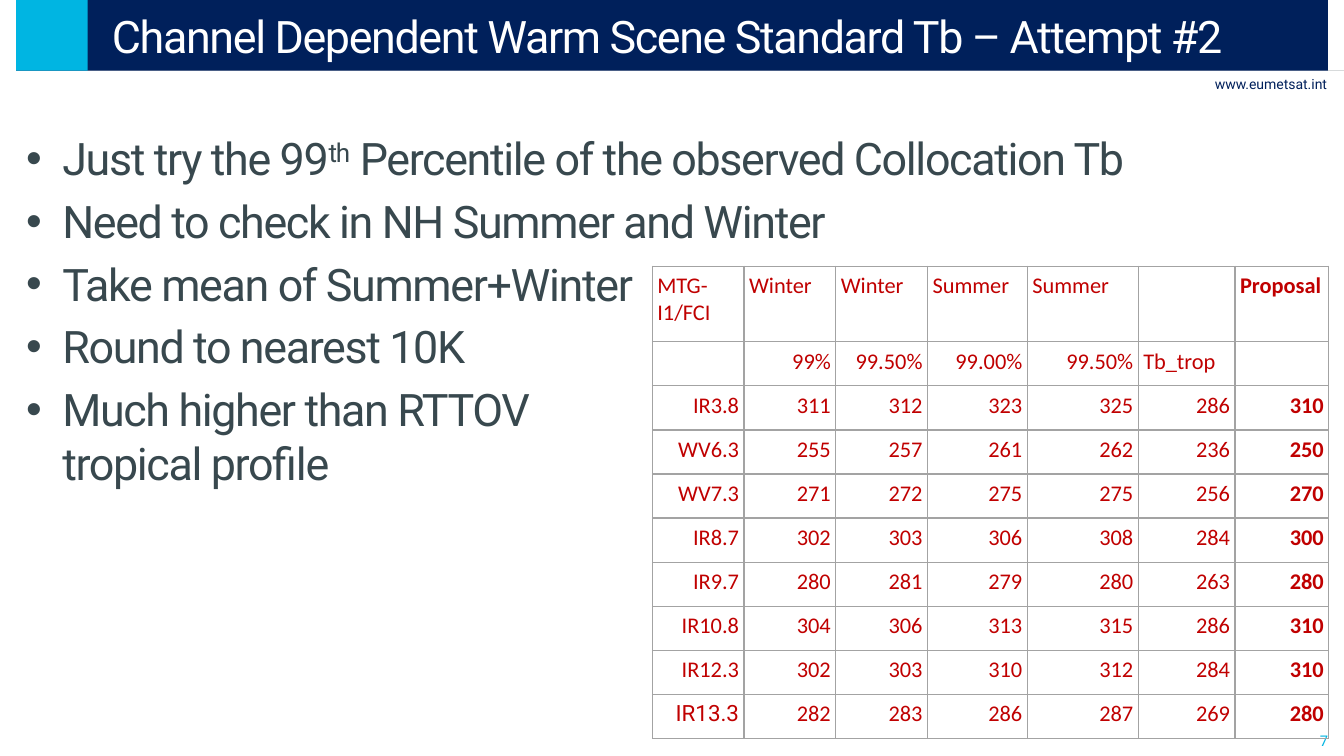
from lxml import etree
from pptx import Presentation, util as u
from pptx.dml.color import RGBColor
from pptx.enum import shapes, text
from pptx.oxml import ns

NAVY, CYAN, SLATE, RED, GREY = "00205B", "00B5E2", "38484E", "C00000", "A3A3A3"
RIGHT = text.PP_ALIGN.RIGHT

deck = Presentation()
deck.slide_width, deck.slide_height = u.Inches(13.33), u.Inches(7.5)
W = 13.33
EDGE, BAR = 0.16, 0.71
slide = deck.slides.add_slide(deck.slide_layouts[6])


def add_run(para, words, size, hue, face="Roboto", bold=False, **attrs):
    run = para.add_run()
    run.text = words
    font = run.font
    font.size, font.name, font.bold = u.Pt(size), face, bold
    font.color.rgb = RGBColor.from_string(hue)
    for key, val in attrs.items():
        run._r.get_or_add_rPr().set(key, str(val))


def add_box(left, top, width, height, wrap=True):
    box = slide.shapes.add_textbox(*map(u.Inches, (left, top, width, height)))
    box.text_frame.word_wrap = wrap
    return box.text_frame


# Header rule
rule = slide.shapes.add_connector(
    shapes.MSO_CONNECTOR.STRAIGHT,
    u.Inches(EDGE), u.Inches(0.7), u.Inches(W), u.Inches(0.7))
rule.line.width = u.Pt(0.5)
rule.line.color.rgb = RGBColor.from_string(SLATE)
tint = rule._element.spPr.find(".//" + ns.qn("a:srgbClr"))
etree.SubElement(tint, ns.qn("a:alpha"), val="20000")
etree.SubElement(rule._element.spPr, ns.qn("a:effectLst"))

# Web address and page number
for words, size, hue, spot, wrap in [
    ("www.eumetsat.int", 10, NAVY, (11.92, 0.7, 1.34, 0.27), False),
    ("7", 10.5, CYAN, (12.6, 7.21, 0.67, 0.29), True),
]:
    para = add_box(*spot, wrap).paragraphs[0]
    para.alignment = RIGHT
    add_run(para, words, size, hue)

# Title bar with its square
for width, hue in [(W - 2 * EDGE, NAVY), (BAR, CYAN)]:
    bar = slide.shapes.add_shape(
        shapes.MSO_SHAPE.RECTANGLE,
        *map(u.Inches, (EDGE, -0.01, width, BAR)))
    bar.shadow.inherit = False
    bar.fill.solid()
    bar.fill.fore_color.rgb = RGBColor.from_string(hue)
    bar.line.fill.background()

# Title
frame = add_box(EDGE + BAR, 0, W - EDGE - BAR, 0.7)
frame.vertical_anchor = text.MSO_ANCHOR.MIDDLE
frame.margin_left = u.Inches(0.24)
frame.margin_right = frame.margin_top = frame.margin_bottom = u.Inches(0.04)
add_run(frame.paragraphs[0],
        "Channel Dependent Warm Scene Standard Tb – Attempt #2",
        32, "FFFFFF", spc=-100)

# Bullets: each item is a list of (words, baseline) runs
items = [
    [("Just try the 99", 0), ("th", 30000),
     (" Percentile of the observed Collocation Tb", 0)],
    [("Need to check in NH Summer and Winter", 0)],
    [("Take mean of Summer+Winter", 0)],
    [("Round to nearest 10K", 0)],
    [("Much higher than RTTOV ", 0), ("tropical profile", 0)],
]
frame = add_box(EDGE, 1.25, W - 2 * EDGE, 6.08)
for num, item in enumerate(items):
    para = frame.add_paragraph() if num else frame.paragraphs[0]
    props = para._p.get_or_add_pPr()
    props.set("marL", str(u.Inches(0.36)))
    props.set("indent", str(-u.Inches(0.36)))
    etree.SubElement(props, ns.qn("a:buFont"), typeface="Arial")
    etree.SubElement(props, ns.qn("a:buChar"), char="•")
    if num:
        para.space_before = u.Pt(6.4)
    for words, base in item:
        if words == "tropical profile":
            para.add_line_break()
        add_run(para, words, 32, SLATE, spc=-100, baseline=base)

# Table of brightness temperatures
rows = [
    ["MTG-I1/FCI", "Winter", "Winter", "Summer", "Summer", "", "Proposal"],
    ["", "99%", "99.50%", "99.00%", "99.50%", "Tb_trop", ""],
    ["IR3.8", 311, 312, 323, 325, 286, 310],
    ["WV6.3", 255, 257, 261, 262, 236, 250],
    ["WV7.3", 271, 272, 275, 275, 256, 270],
    ["IR8.7", 302, 303, 306, 308, 284, 300],
    ["IR9.7", 280, 281, 279, 280, 263, 280],
    ["IR10.8", 304, 306, 313, 315, 286, 310],
    ["IR12.3", 302, 303, 310, 312, 284, 310],
    ["IR13.3", 282, 283, 286, 287, 269, 280],
]
cols = [0.91, 0.91, 0.91, 0.99, 1.1, 0.96, 0.93]
tall, head = 4.69, 0.75
table = slide.shapes.add_table(
    len(rows), len(cols),
    *map(u.Inches, (6.47, 2.64, sum(cols), tall))).table
table.first_row = table.horz_banding = False
for col, width in zip(table.columns, cols):
    col.width = u.Inches(width)
for r, row in enumerate(rows):
    table.rows[r].height = u.Inches(
        (tall - head) / (len(rows) - 1) if r else head)
    for c, value in enumerate(row):
        cell = table.cell(r, c)
        cell.margin_left = cell.margin_right = u.Inches(0.05)
        cell.margin_top = cell.margin_bottom = u.Inches(0.06)
        para = cell.text_frame.paragraphs[0]
        if r and value != "Tb_trop":
            para.alignment = RIGHT
        if value == "":
            para.font.size = u.Pt(16)
        else:
            face = "Roboto" if value == "IR13.3" else "Calibri"
            add_run(para, str(value), 16, RED, face, c == len(cols) - 1)
        # Borders come before the fill in the cell properties
        props = cell._tc.get_or_add_tcPr()
        for side in ("lnL", "lnR", "lnT", "lnB"):
            line = etree.SubElement(props, ns.qn("a:" + side), w=str(u.Pt(1)))
            fill = etree.SubElement(line, ns.qn("a:solidFill"))
            etree.SubElement(fill, ns.qn("a:srgbClr"), val=GREY)
        cell.fill.background()

deck.save("out.pptx")
